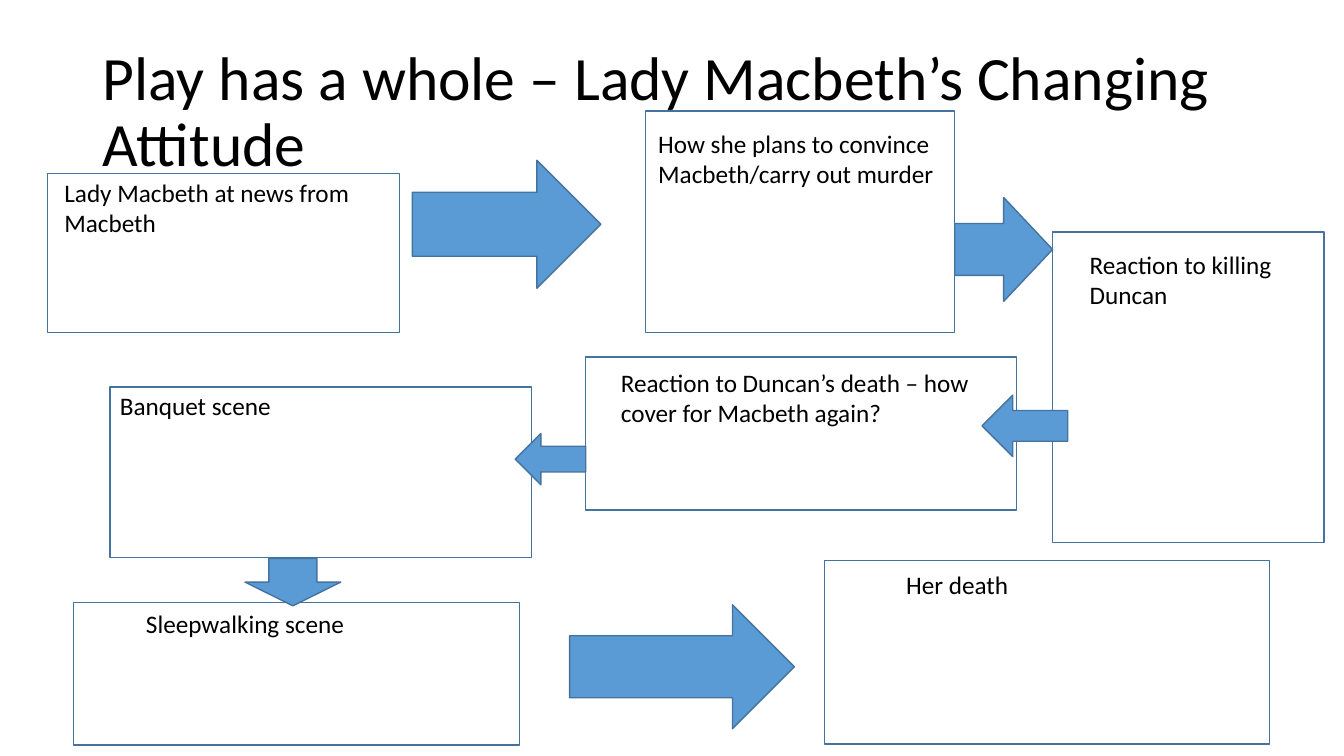
from pptx import Presentation, util as u
from pptx.dml.color import RGBColor
from pptx.enum import shapes, text

COLORS = {"text": "000000", "arrow": "5B9BD5", "line": "43739E"}
FONT = "Calibri"
TITLE = ("Play has a whole – Lady Macbeth’s Changing Attitude", (0.92, 0.4, 11.5, 1.45))
TITLE_FORMAT = {"size": 44, "spacing": 0.9, "anchor": text.MSO_ANCHOR.MIDDLE}
LABEL_FORMAT = {"size": 18, "spacing": 1.0, "anchor": text.MSO_ANCHOR.TOP}

STAGES = [
    ("Lady Macbeth at news from Macbeth", (0.54, 1.71, 3.65, 1.92), (0.47, 1.72, 3.49, 1.58)),
    ("How she plans to convince Macbeth/carry out murder", (6.43, 1.22, 3.44, 1.31), (6.4, 1.1, 3.07, 2.2)),
    ("Reaction to killing Duncan", (10.71, 2.42, 2.17, 0.71), (10.44, 2.3, 2.69, 3.08)),
    ("Reaction to Duncan’s death – how cover for Macbeth again?", (6.06, 3.59, 3.81, 0.71), (5.81, 3.54, 4.27, 1.52)),
    ("Banquet scene", (1.09, 3.82, 4.02, 0.4), (1.09, 3.84, 4.18, 1.69)),
    ("Sleepwalking scene", (1.35, 5.99, 3.17, 0.4), (0.73, 5.98, 4.42, 1.41)),
    ("Her death", (8.89, 5.6, 3.64, 0.4), (8.18, 5.56, 4.41, 1.82)),
]
ARROWS = [
    ("RIGHT_ARROW", (4.09, 1.59, 1.87, 1.27)),
    ("RIGHT_ARROW", (9.47, 1.96, 0.97, 1.03)),
    ("LEFT_ARROW", (9.74, 3.92, 0.85, 0.61)),
    ("LEFT_ARROW", (5.11, 4.3, 0.7, 0.51)),
    ("DOWN_ARROW", (2.43, 5.54, 0.95, 0.47)),
    ("RIGHT_ARROW", (5.65, 6, 2.23, 1.23)),
]


def inches(box):
    return [u.Inches(v) for v in box]


def add_text(s, words, box, fmt):
    tf = s.shapes.add_textbox(*inches(box)).text_frame
    for name, value in {"word_wrap": True, "vertical_anchor": fmt["anchor"]}.items():
        setattr(tf, name, value)
    p = tf.paragraphs[0]
    p.line_spacing = fmt["spacing"]
    r = p.add_run()
    r.text = words
    for name, value in {"name": FONT, "size": u.Pt(fmt["size"])}.items():
        setattr(r.font, name, value)
    r.font.color.rgb = RGBColor.from_string(COLORS["text"])


def add_outlined(s, kind, box, fill=None):
    sp = s.shapes.add_shape(getattr(shapes.MSO_SHAPE, kind), *inches(box))
    sp.shadow.inherit = False
    if fill:
        sp.fill.solid()
        sp.fill.fore_color.rgb = RGBColor.from_string(fill)
    else:
        sp.fill.background()
    sp.line.color.rgb = RGBColor.from_string(COLORS["line"])
    sp.line.width = u.Pt(1)


def main():
    prs = Presentation()
    prs.slide_width, prs.slide_height = inches((13.33, 7.5))
    s = prs.slides.add_slide(prs.slide_layouts[6])
    add_text(s, *TITLE, TITLE_FORMAT)
    for label, label_box, frame in STAGES:
        add_text(s, label, label_box, LABEL_FORMAT)
        add_outlined(s, "RECTANGLE", frame)
    for kind, box in ARROWS:
        add_outlined(s, kind, box, COLORS["arrow"])
    prs.save("out.pptx")


if __name__ == "__main__":
    main()
